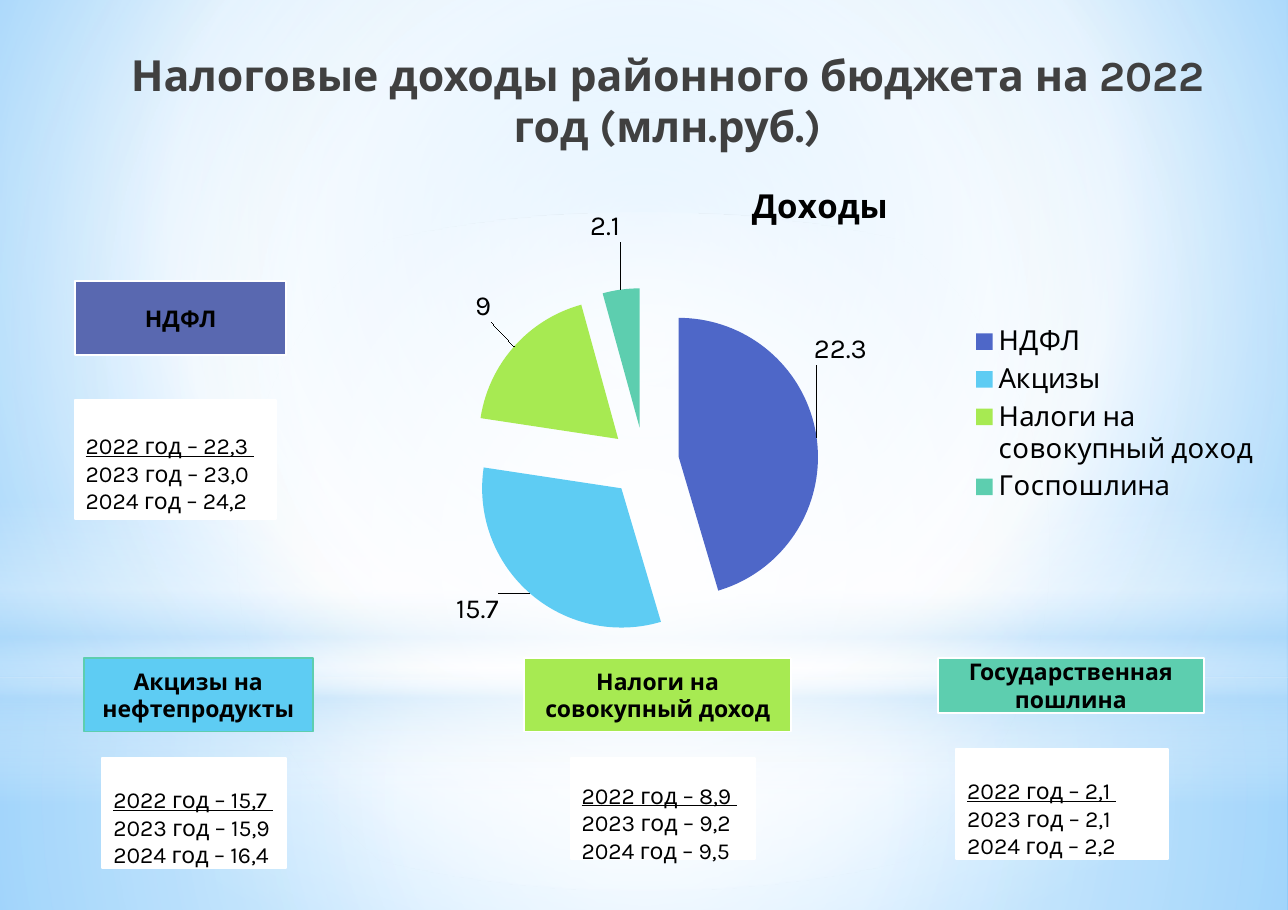
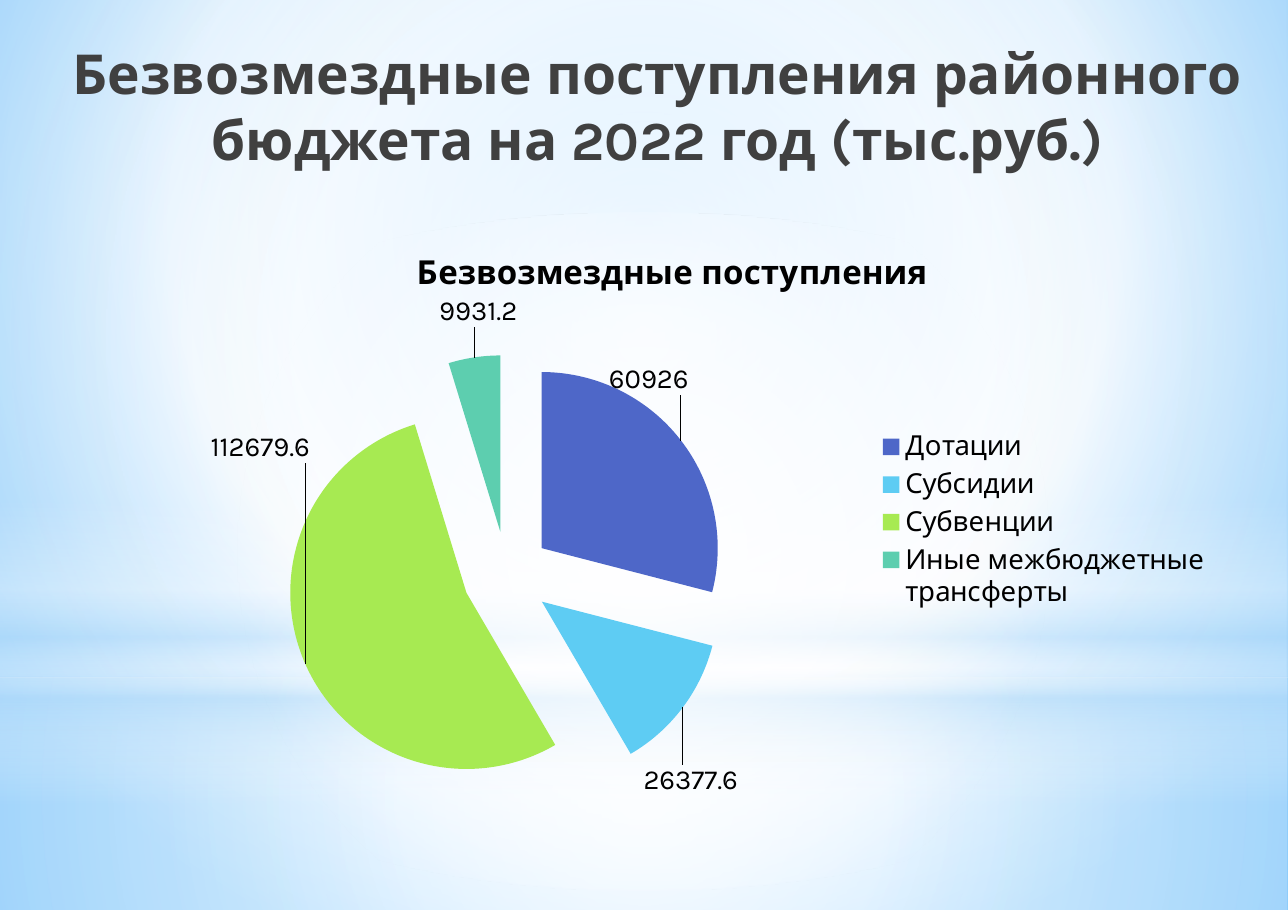
"""Builds two slides on the tax revenues and grants of a district budget."""
from dataclasses import dataclass

from pptx import Presentation
from pptx.chart.data import CategoryChartData as ChartData
from pptx.dml.color import RGBColor
from pptx.enum.chart import XL_CHART_TYPE as ChartType, XL_LEGEND_POSITION as LegendSide
from pptx.enum.shapes import MSO_SHAPE as Preset
from pptx.enum.text import MSO_ANCHOR as Anchor, PP_ALIGN as Align
from pptx.oxml import parse_xml
from pptx.oxml.ns import nsdecls, qn
from pptx.util import Inches, Pt

WIDTH, HEIGHT = 11.69, 8.26


@dataclass(frozen=True)
class Theme:
    font: str = "Karla"
    ink: str = "000000"
    heading: str = "404040"
    white: str = "FFFFFF"
    haze: str = "B4DCFA"
    income_tax: str = "5968B0"
    blue: str = "4E67C8"
    sky: str = "5ECCF3"
    lime: str = "A7EA52"
    mint: str = "5DCEAF"
    sky_edge: str = "9ED5FF"
    sky_deep: str = "5BB9FF"
    box_size: float = 15
    chart_size: float = 18
    chart_title_size: float = 21.6
    outline: float = 1.25

    @property
    def slices(self):
        return self.blue, self.sky, self.lime, self.mint


def rgb(value):
    return RGBColor.from_string(value)


def lengths(box):
    return [Inches(value) for value in box]


def gradient(stops, centre=None):
    marks = "".join(
        f'<a:gs pos="{pos * 1000}"><a:srgbClr val="{color}">'
        f'<a:alpha val="{alpha * 1000}"/></a:srgbClr></a:gs>'
        for pos, color, alpha in stops)
    if centre:
        left, top, right, bottom = (side * 1000 for side in centre)
        course = (f'<a:path path="circle"><a:fillToRect l="{left}" t="{top}" '
                  f'r="{right}" b="{bottom}"/></a:path>')
    else:
        course = '<a:lin ang="5400000" scaled="0"/>'
    return parse_xml(f'<a:gradFill {nsdecls("a")} rotWithShape="1">'
                     f'<a:gsLst>{marks}</a:gsLst>{course}</a:gradFill>')


def manual_layout(**parts):
    entries = "".join(f'<c:{key} val="{value}"/>' for key, value in parts.items())
    return f'<c:layout {nsdecls("c")}><c:manualLayout>{entries}</c:manualLayout></c:layout>'


def label_flags():
    shown = {"LegendKey": 0, "Val": 1, "CatName": 0, "SerName": 0, "Percent": 0, "BubbleSize": 0}
    return '<c:dLblPos val="outEnd"/>' + "".join(
        f'<c:show{key} val="{value}"/>' for key, value in shown.items())


class Deck:
    def __init__(self, theme):
        self.theme = theme
        self.prs = Presentation()
        self.prs.slide_width, self.prs.slide_height = Inches(WIDTH), Inches(HEIGHT)
        self.layout = self.prs.slide_layouts[6]
        self.slide = None

    def new_slide(self):
        self.slide = self.prs.slides.add_slide(self.layout)

    def backdrop(self):
        t = self.theme
        middle = (50, 50, 50, 50)
        fill = self.layout.background.fill
        fill.solid()
        holder = self.layout.element.find(".//" + qn("p:bgPr"))
        holder.replace(holder.find(qn("a:solidFill")), gradient(
            [(0, t.sky_edge, 100), (60, t.white, 100), (100, t.sky_deep, 100)],
            (20, 10, 20, 60)))
        horizon = 6.15
        bands = [
            (Preset.RECTANGLE, (0, horizon, WIDTH, HEIGHT - horizon),
             [(0, t.white, 91), (37, t.white, 76), (100, t.haze, 79)], middle),
            (Preset.RECTANGLE, (0, 0, WIDTH, horizon),
             [(0, t.white, 89), (48, t.white, 62), (100, t.haze, 79)], middle),
            (Preset.RECTANGLE, (0, 4.54, WIDTH, 2.75),
             [(0, t.white, 0), (29, t.white, 30), (45, t.haze, 40),
              (55, t.white, 26), (65, t.haze, 60), (100, t.white, 0)], None),
            (Preset.OVAL, (0, 1.93, WIDTH, horizon),
             [(0, t.white, 100), (56, t.white, 0)], middle),
        ]
        for preset, box, stops, centre in bands:
            band = self.slide.shapes.add_shape(preset, *lengths(box))
            band.shadow.inherit = False
            band.line.fill.background()
            band.fill.solid()
            holder = band.element.spPr
            holder.replace(holder.find(qn("a:solidFill")), gradient(stops, centre))
            self.layout.shapes.element.append(band.element)

    def style(self, font, size, color, bold=False):
        font.name, font.size, font.bold = self.theme.font, Pt(size), bold
        font.color.rgb = rgb(color)

    def title(self, text, box, size):
        frame = self.slide.shapes.add_textbox(*lengths(box)).text_frame
        frame.word_wrap = True
        frame.margin_left = frame.margin_right = Inches(0.11)
        frame.margin_top = frame.margin_bottom = Inches(0.06)
        heading = frame.paragraphs[0]
        heading.text, heading.alignment = text, Align.CENTER
        self.style(heading.runs[0].font, size, self.theme.heading, bold=True)

    def panel(self, lines, box, fill, edge, align, bold=False):
        panel = self.slide.shapes.add_shape(Preset.RECTANGLE, *lengths(box))
        panel.shadow.inherit = False
        panel.fill.solid()
        panel.fill.fore_color.rgb = rgb(fill)
        panel.line.color.rgb = rgb(edge)
        panel.line.width = Pt(self.theme.outline)
        frame = panel.text_frame
        frame.word_wrap, frame.vertical_anchor = True, Anchor.MIDDLE
        frame.text = "\n".join(lines)
        for paragraph in frame.paragraphs:
            paragraph.alignment = align
            self.style(paragraph.runs[0].font, self.theme.box_size, self.theme.ink, bold)
        return frame

    def tax_name(self, name, box, fill, edge):
        self.panel([name], box, fill, edge, Align.CENTER, bold=True)

    def forecast(self, amounts, box):
        lines = [f"{year} год – {amount}" for year, amount in enumerate(amounts, 2022)]
        lines[0] += " "
        white = self.theme.white
        frame = self.panel(lines, box, white, white, Align.JUSTIFY)
        frame.margin_top = Inches(0.3)
        frame.paragraphs[0].runs[0].font.underline = True

    def pie(self, name, amounts, box, plot_box, label_shifts):
        t = self.theme
        data = ChartData()
        data.categories = list(amounts)
        data.add_series(name, list(amounts.values()))
        chart = self.slide.shapes.add_chart(ChartType.PIE, *lengths(box), data).chart
        self.style(chart.font, t.chart_size, t.ink)
        chart.has_title = True
        heading = chart.chart_title.text_frame
        heading.text = name
        self.style(heading.paragraphs[0].runs[0].font, t.chart_title_size, t.ink, bold=True)
        chart.chart_title.include_in_layout = False
        chart.has_legend = True
        chart.legend.position = LegendSide.RIGHT
        chart.legend.include_in_layout = False
        plot = chart.plots[0]
        plot.vary_by_categories = True
        for index, color in enumerate(t.slices):
            fill = plot.series[0].points[index].format.fill
            fill.solid()
            fill.fore_color.rgb = rgb(color)
        area = chart.element.find(".//" + qn("c:plotArea"))
        series = area.find(".//" + qn("c:ser"))
        self.explode(series)
        self.value_labels(series, label_shifts)
        self.place_plot(area, plot_box)

    def explode(self, series):
        series.find(qn("c:dPt")).addprevious(
            parse_xml(f'<c:explosion {nsdecls("c")} val="25"/>'))

    def value_labels(self, series, shifts):
        flags = label_flags()
        labels = "".join(
            f'<c:dLbl><c:idx val="{index}"/>{manual_layout(x=x, y=y)}{flags}</c:dLbl>'
            for index, (x, y) in enumerate(shifts))
        series.find(qn("c:cat")).addprevious(parse_xml(
            f'<c:dLbls {nsdecls("c")}>{labels}{flags}<c:showLeaderLines val="1"/></c:dLbls>'))

    def place_plot(self, area, plot_box):
        x, y, w, h = plot_box
        for automatic in area.findall(qn("c:layout")):
            area.remove(automatic)
        area.insert(0, parse_xml(manual_layout(
            layoutTarget="inner", xMode="edge", yMode="edge", x=x, y=y, w=w, h=h)))


def tax_slide(deck):
    t = deck.theme
    deck.title("Налоговые доходы районного бюджета на 2022 год (млн.руб.)",
               (0.85, 0.38, 10.42, 1.08), 28)
    deck.pie("Доходы",
             {"НДФЛ": 22.3, "Акцизы": 15.7, "Налоги на совокупный доход": 9, "Госпошлина": 2.1},
             (3.35, 1.47, 8.19, 4.58), (0.11, 0.25, 0.39, 0.69),
             [(-0.01, -0.14), (-0.03, -0.01), (-0.02, -0.04), (0, -0.08)])
    taxes = [
        ("НДФЛ", (0.68, 2.55, 1.92, 0.67), t.income_tax, t.white,
         ("22,3", "23,0", "24,2"), (0.68, 3.63, 1.83, 1.08)),
        ("Акцизы на нефтепродукты", (0.76, 5.97, 2.08, 0.67), t.sky, t.mint,
         ("15,7", "15,9", "16,4"), (0.93, 6.88, 1.67, 1)),
        ("Налоги на совокупный доход", (4.76, 5.97, 2.42, 0.67), t.lime, t.white,
         ("8,9", "9,2", "9,5"), (5.18, 6.88, 1.67, 0.92)),
        ("Государственная пошлина", (8.51, 5.97, 2.42, 0.5), t.mint, t.white,
         ("2,1", "2,1", "2,2"), (8.68, 6.8, 1.92, 1)),
    ]
    for name, name_box, fill, edge, amounts, forecast_box in taxes:
        deck.tax_name(name, name_box, fill, edge)
        deck.forecast(amounts, forecast_box)


def grants_slide(deck):
    deck.title("Безвозмездные поступления районного бюджета на 2022 год (тыс.руб.)",
               (0.51, 0.3, 10.92, 1.42), 36)
    deck.pie("Безвозмездные поступления",
             {"Дотации": 60926, "Субсидии": 26377.6, "Субвенции": 112679.6,
              "Иные межбюджетные трансферты": 9931.2},
             (1.1, 2.05, 10, 5.33), (0.15, 0.22, 0.4, 0.75),
             [(-0.07, -0.07), (-0.04, 0.09), (0.01, -0.4), (0.04, -0.04)])


def main():
    deck = Deck(Theme())
    deck.new_slide()
    deck.backdrop()
    tax_slide(deck)
    deck.new_slide()
    grants_slide(deck)
    deck.prs.save("out.pptx")


if __name__ == "__main__":
    main()
